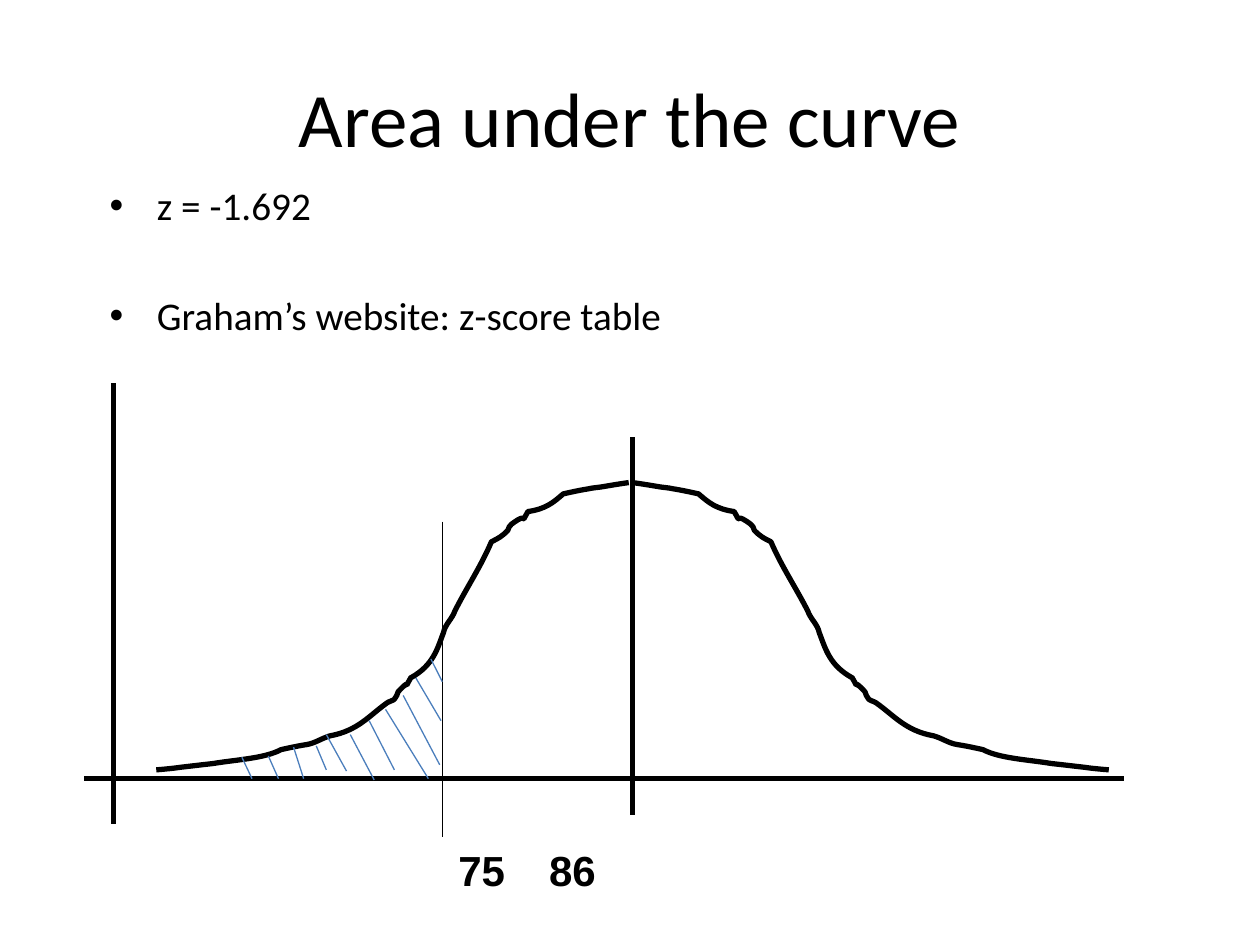
import pptx
import pptx.util
import pptx.dml.color
import pptx.enum.shapes
import pptx.enum.text
import pptx.oxml.ns
from lxml import etree

# Content; all positions are in inches
TITLE = "Area under the curve"
POINTS = [("z = -1.692", 4), ("Graham’s website: z-score table", 36)]
SCORES = ["75", "86"]
INDENT, TAB = 0.28, 1.57

BLACK, BLUE = "000000", "4B7EBC"
THICK, THIN = 3, 0.75

# x1, y1, x2, y2, width
BASE = (0.67, 6.18, 8.92, 6.18, THICK)
UPRIGHTS = [
    (5.02, 3.47, 5.02, 6.47, THICK),
    (0.9, 3.04, 0.9, 6.54, THICK),
    (3.51, 4.14, 3.51, 6.64, THIN),
]
HATCH = [
    (1.92, 6.01, 2, 6.18), (2.13, 6, 2.21, 6.18),
    (2.33, 5.93, 2.41, 6.18), (2.51, 5.92, 2.59, 6.11),
    (2.59, 5.83, 2.75, 6.12), (2.78, 5.83, 2.97, 6.19),
    (2.93, 5.72, 3.13, 6.11), (3.06, 5.63, 3.4, 6.18),
    (3.2, 5.52, 3.49, 6.07), (3.42, 5.23, 3.51, 5.41),
    (3.3, 5.38, 3.5, 5.72),
]

# Left half of the bell, from the peak down: two handles and an end per bend
PEAK = (4.99, 3.83)
BENDS = [
    (4.92, 3.84, 4.86, 3.85, 4.8, 3.86), (4.75, 3.87, 4.71, 3.87, 4.67, 3.88),
    (4.6, 3.89, 4.47, 3.92, 4.47, 3.92), (4.39, 3.99, 4.33, 4.04, 4.19, 4.06),
    (4.11, 4.2, 4.22, 4.04, 4.06, 4.16), (4.04, 4.17, 4.04, 4.19, 4.03, 4.21),
    (3.98, 4.26, 3.96, 4.27, 3.9, 4.3), (3.82, 4.49, 3.7, 4.67, 3.61, 4.85),
    (3.59, 4.91, 3.53, 4.96, 3.52, 5.02), (3.47, 5.15, 3.44, 5.28, 3.26, 5.38),
    (3.18, 5.52, 3.29, 5.35, 3.16, 5.49), (3.15, 5.51, 3.15, 5.53, 3.13, 5.55),
    (3.12, 5.56, 3.08, 5.57, 3.07, 5.58), (2.93, 5.68, 2.84, 5.8, 2.62, 5.84),
    (2.55, 5.86, 2.5, 5.9, 2.43, 5.91), (2.36, 5.92, 2.23, 5.95, 2.23, 5.95),
    (2.1, 6.02, 1.87, 6.03, 1.69, 6.06), (1.6, 6.07, 1.52, 6.08, 1.43, 6.09),
    (1.37, 6.1, 1.24, 6.11, 1.24, 6.11),
]
RIGHT, STRETCH = 5.02, 3.78 / 3.75


def size(inch):
    return pptx.util.Cm(inch * 2.54)


def color(text):
    return pptx.dml.color.RGBColor.from_string(text)


def add_tag(parent, name, **attrs):
    return etree.SubElement(parent, pptx.oxml.ns.qn(name),
                            {key: str(val) for key, val in attrs.items()})


def place(shape, left, top, wide, high):
    shape.left, shape.top = size(left), size(top)
    shape.width, shape.height = size(wide), size(high)


def add_run(para, text, points, face, bold=False):
    run = para.add_run()
    run.text = text
    run.font.size = pptx.util.Pt(points)
    run.font.name = face
    run.font.bold = bold
    run.font.color.rgb = color(BLACK)


def ink(shape, tint, width):
    shape.line.color.rgb = color(tint)
    shape.line.width = pptx.util.Pt(width)


def add_line(shapes, x1, y1, x2, y2, width, tint=BLACK):
    line = shapes.add_connector(
        pptx.enum.shapes.MSO_CONNECTOR.STRAIGHT,
        size(x1), size(y1), size(x2), size(y2))
    ink(line, tint, width)
    add_tag(line._element.spPr, "a:effectLst")


def add_curve(shapes, dots):
    """Draw a peak followed by two handles and an end for each bend."""
    spots = [(size(x), size(y)) for x, y in dots]
    pen = shapes.build_freeform(*spots[0])
    pen.add_line_segments(spots[3::3], close=False)
    curve = pen.convert_to_shape()
    # Turn each straight step into a cubic bend
    steps = list(curve._element.iter(pptx.oxml.ns.qn("a:lnTo")))
    for i, step in enumerate(steps):
        bend = add_tag(step.getparent(), "a:cubicBezTo")
        for x, y in spots[3 * i + 1:3 * i + 4]:
            add_tag(bend, "a:pt", x=x - curve.left, y=y - curve.top)
        step.getparent().remove(step)
    curve.fill.background()
    curve.shadow.inherit = False
    ink(curve, BLACK, THICK)


def add_scores(shapes):
    box = shapes.add_textbox(size(3.26), size(6.65), size(6.14), size(0.51))
    box.text_frame.word_wrap = True
    para = box.text_frame.paragraphs[0]
    add_run(para, "\t".join(SCORES), 24, "Arial", True)
    props = para._p.get_or_add_pPr()
    props.set("marL", "0")
    props.set("indent", str(size(INDENT)))
    add_tag(add_tag(props, "a:tabLst"), "a:tab", pos=size(TAB), algn="l")


def main():
    deck = pptx.Presentation()
    deck.slide_width, deck.slide_height = size(10), size(7.5)
    slide = deck.slides.add_slide(deck.slide_layouts[1])

    # Title and list
    title, body = slide.placeholders
    place(title, 0.5, 0.3, 9, 1.25)
    add_run(title.text_frame.paragraphs[0], TITLE, 44, "Calibri")
    place(body, 0.77, 1.39, 5.05, 1.53)
    frame = body.text_frame
    frame.auto_size = pptx.enum.text.MSO_AUTO_SIZE.NONE
    for i, (text, gap) in enumerate(POINTS):
        para = frame.add_paragraph() if i else frame.paragraphs[0]
        para.space_before = pptx.util.Pt(gap)
        add_run(para, text, 22.4, "Calibri")

    # Bell curve with axes and scores; the right half mirrors the left
    graph = slide.shapes.add_group_shape().shapes
    add_line(graph, *BASE)
    left = [PEAK] + [bend[k:k + 2] for bend in BENDS for k in (0, 2, 4)]
    add_curve(graph, left)
    add_curve(graph, [(RIGHT + (PEAK[0] - x) * STRETCH, y) for x, y in left])
    for line in UPRIGHTS:
        add_line(graph, *line)
    add_scores(graph)

    # Shaded tail
    for ends in HATCH:
        add_line(slide.shapes, *ends, THIN, BLUE)

    deck.save("out.pptx")


if __name__ == "__main__":
    main()
